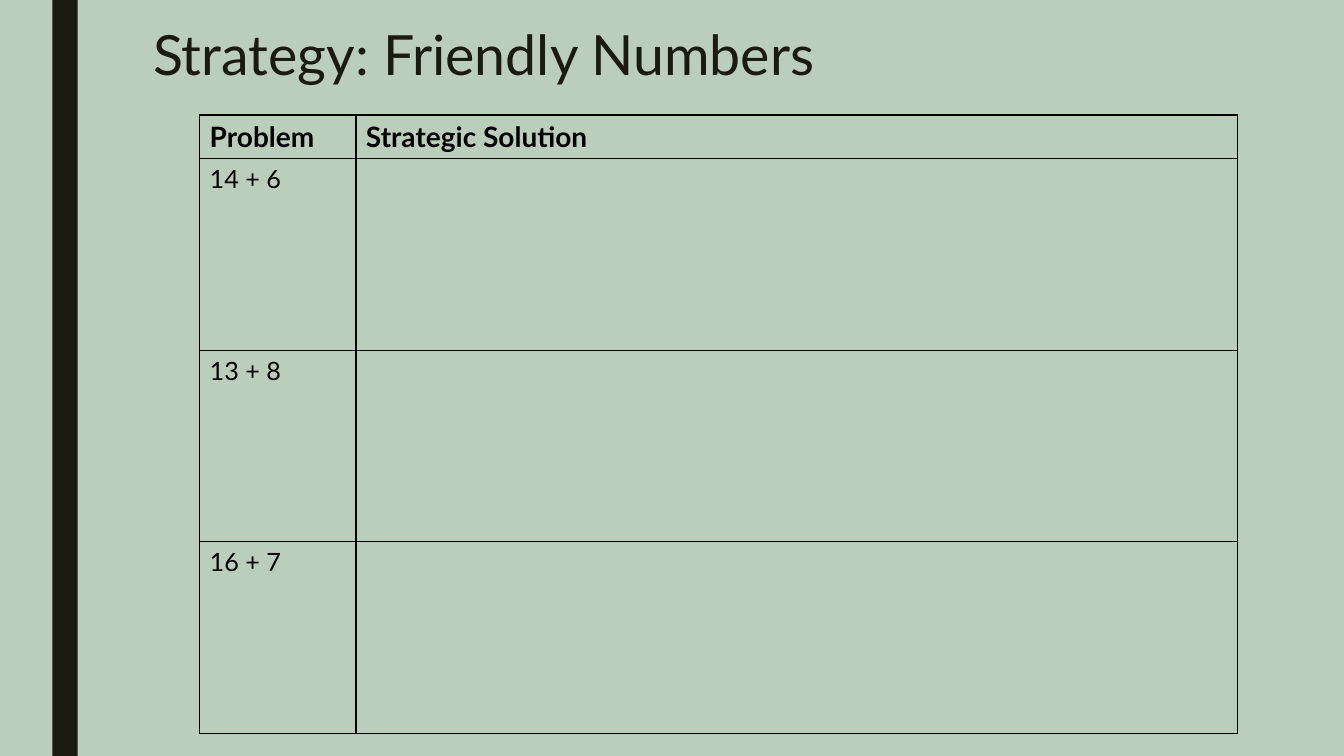
from lxml import etree
from pptx import Presentation
from pptx.dml.color import RGBColor
from pptx.enum.shapes import MSO_SHAPE
from pptx.enum.text import MSO_ANCHOR
from pptx.oxml.ns import qn
from pptx.util import Inches, Pt

RECTANGLE = MSO_SHAPE.RECTANGLE
TOP = MSO_ANCHOR.TOP

TITLE = "Strategy: Friendly Numbers"
HEADINGS = ("Problem", "Strategic Solution")
PROBLEMS = ("14 + 6", "13 + 8", "16 + 7")

THEME = {
    "font": "Lato",
    "background": "BBCDBB",
    "dark": "191B0E",
    "ink": "000000",
    "title_size": 39.6,
    "heading_size": 20,
    "problem_size": 18,
    "border_width": 1,
}

SLIDE_WIDTH, SLIDE_HEIGHT = 13.33, 7.5
BAR_LEFT, BAR_WIDTH = 0.52, 0.25
TITLE_BOX = (1.42, 0.23, 10.5, 0.75)
TITLE_LINE_SPACING = 0.89
TABLE_LEFT, TABLE_TOP = 1.98, 1.14
COLUMN_WIDTHS = (1.55, 8.74)
HEADING_HEIGHT, PROBLEM_HEIGHT = 0.43, 1.9


def color(role):
    return RGBColor.from_string(THEME[role])


def style_text(paragraph, size, role, bold=False):
    for run in paragraph.runs:
        run.font.name = THEME["font"]
        run.font.size = Pt(THEME[size])
        run.font.bold = bold
        run.font.color.rgb = color(role)


def add_borders(cell):
    properties = cell._tc.get_or_add_tcPr()
    for position, side in enumerate(("lnL", "lnR", "lnT", "lnB")):
        border = etree.Element(qn(f"a:{side}"), w=str(Pt(THEME["border_width"])))
        fill = etree.SubElement(border, qn("a:solidFill"))
        etree.SubElement(fill, qn("a:srgbClr"), val=THEME["ink"])
        properties.insert(position, border)


def add_bar(slide):
    bar = slide.shapes.add_shape(
        RECTANGLE, Inches(BAR_LEFT), 0, Inches(BAR_WIDTH), Inches(SLIDE_HEIGHT)
    )
    bar.shadow.inherit = False
    bar.fill.solid()
    bar.fill.fore_color.rgb = color("dark")
    bar.line.fill.background()


def add_title(slide):
    title = slide.shapes.add_textbox(*map(Inches, TITLE_BOX)).text_frame
    title.word_wrap = True
    title.vertical_anchor = TOP
    title.text = TITLE
    title.paragraphs[0].line_spacing = TITLE_LINE_SPACING
    style_text(title.paragraphs[0], "title_size", "dark")


def add_problem_table(slide):
    rows = [HEADINGS] + [(problem, "") for problem in PROBLEMS]
    heights = [HEADING_HEIGHT] + [PROBLEM_HEIGHT] * len(PROBLEMS)
    table = slide.shapes.add_table(
        len(rows), len(HEADINGS), Inches(TABLE_LEFT), Inches(TABLE_TOP),
        Inches(sum(COLUMN_WIDTHS)), Inches(sum(heights)),
    ).table
    table.horz_banding = False
    for column, width in zip(table.columns, COLUMN_WIDTHS):
        column.width = Inches(width)
    for r, (texts, height) in enumerate(zip(rows, heights)):
        table.rows[r].height = Inches(height)
        heading = r == 0
        size = "heading_size" if heading else "problem_size"
        for c, text in enumerate(texts):
            cell = table.cell(r, c)
            cell.fill.background()
            add_borders(cell)
            cell.text_frame.text = text
            style_text(cell.text_frame.paragraphs[0], size, "ink", heading)


def main():
    presentation = Presentation()
    presentation.slide_width = Inches(SLIDE_WIDTH)
    presentation.slide_height = Inches(SLIDE_HEIGHT)
    slide = presentation.slides.add_slide(presentation.slide_layouts[6])
    slide.background.fill.solid()
    slide.background.fill.fore_color.rgb = color("background")
    add_bar(slide)
    add_title(slide)
    add_problem_table(slide)
    presentation.save("out.pptx")


if __name__ == "__main__":
    main()
